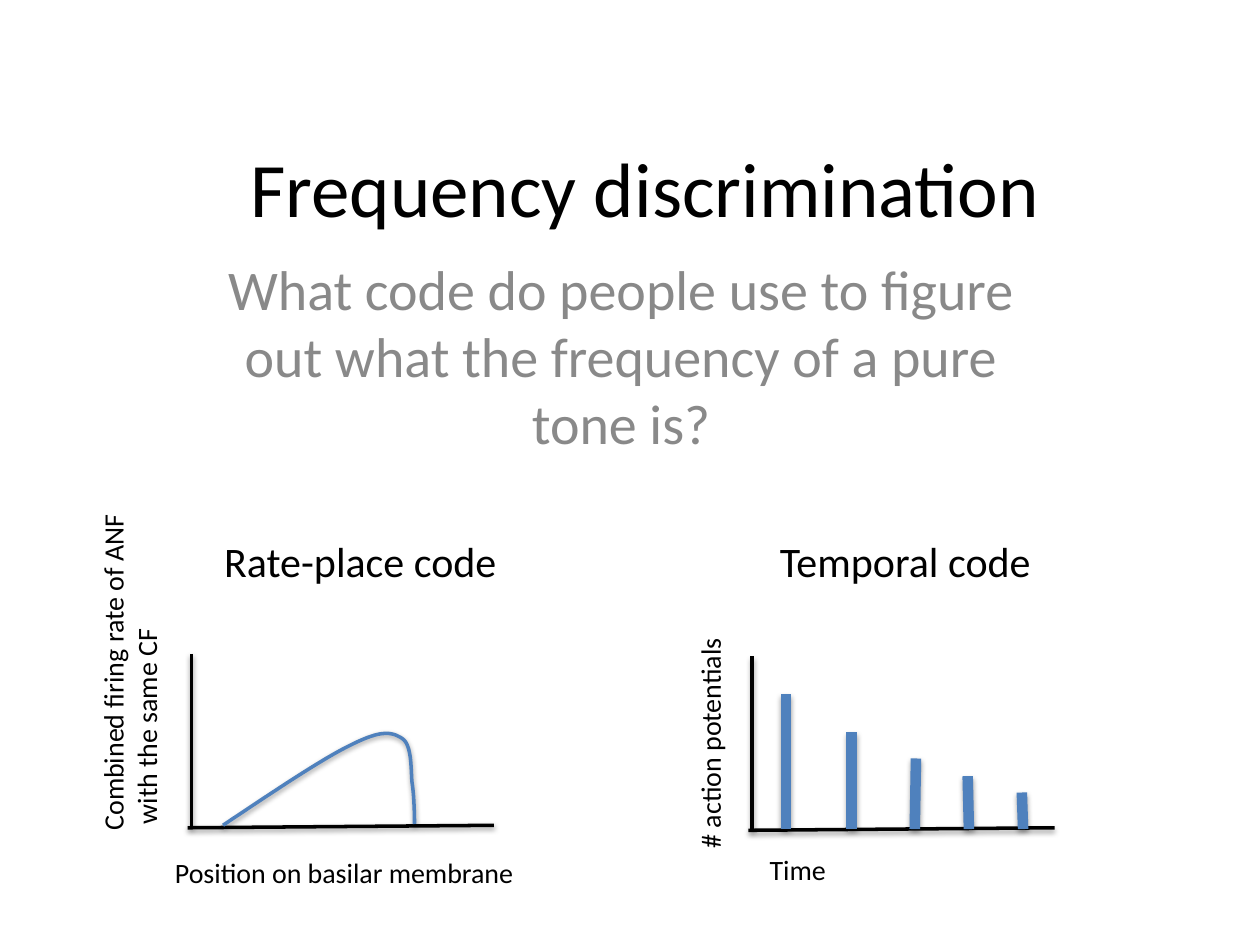
from dataclasses import dataclass
from typing import Any

from lxml import etree
from pptx import Presentation
from pptx import util as u
from pptx.dml import color
from pptx.enum import shapes, text
from pptx.oxml import ns

BLACK, GRAY, BLUE = "000000", "898989", "4F81BD"


def rgb(value):
    return color.RGBColor.from_string(value)


def bezier(start, curves, steps=16):
    points = [start]
    for first, second, end in curves:
        origin = points[-1]
        for step in range(1, steps + 1):
            t = step / steps
            s = 1 - t
            points.append(tuple(
                s**3 * a + 3 * s * s * t * b + 3 * s * t * t * c + t**3 * d
                for a, b, c, d in zip(origin, first, second, end)))
    return points


@dataclass
class Painter:
    page: Any
    font: str = "Calibri"

    def add_span(self, para, content, size, tint):
        span = para.add_run()
        span.text = content
        span.font.name = self.font
        span.font.size = u.Pt(size)
        span.font.color.rgb = rgb(tint)

    def place(self, box, left, top, width, height):
        box.left, box.top = u.Inches(left), u.Inches(top)
        box.width, box.height = u.Inches(width), u.Inches(height)

    def heading(self, box, area, content, size, tint, anchor):
        self.place(box, *area)
        box.text_frame.vertical_anchor = anchor
        box.text_frame.auto_size = text.MSO_AUTO_SIZE.NONE
        para = box.text_frame.paragraphs[0]
        para.alignment = text.PP_ALIGN.CENTER
        para.space_before = u.Pt(0)
        self.add_span(para, content, size, tint)

    def label(self, area, lines, size=16, turn=0):
        box = self.page.shapes.add_textbox(*map(u.Inches, area))
        box.rotation = turn
        frame = box.text_frame
        frame.word_wrap = False
        frame.auto_size = text.MSO_AUTO_SIZE.SHAPE_TO_FIT_TEXT
        for index, content in enumerate(lines):
            para = frame.add_paragraph() if index else frame.paragraphs[0]
            self.add_span(para, content, size, BLACK)

    def stroke(self, shape, tint, weight):
        shape.line.color.rgb = rgb(tint)
        shape.line.width = u.Pt(weight)
        properties = shape.element.spPr
        effects = etree.SubElement(properties, ns.qn("a:effectLst"))
        shadow = etree.SubElement(
            effects, ns.qn("a:outerShdw"), blurRad=str(u.Pt(3.1)),
            dist=str(u.Pt(1.6)), dir="5400000", rotWithShape="0")
        shade = etree.SubElement(shadow, ns.qn("a:srgbClr"), val=BLACK)
        etree.SubElement(shade, ns.qn("a:alpha"), val="38000")

    def line(self, start, end, tint=BLACK, weight=2):
        connector = self.page.shapes.add_connector(
            shapes.MSO_CONNECTOR.STRAIGHT, *map(u.Inches, start + end))
        self.stroke(connector, tint, weight)

    def axes(self, left, top):
        self.line((left, top), (left, top + 1.38))
        self.line((left - 0.03, top + 1.38), (left + 2.4, top + 1.36))

    def curve(self, points, tint):
        spots = [(u.Inches(x), u.Inches(y)) for x, y in points]
        builder = self.page.shapes.build_freeform(*spots[0])
        builder.add_line_segments(spots[1:], close=False)
        shape = builder.convert_to_shape()
        shape.fill.background()
        self.stroke(shape, tint, 2)


def main():
    deck = Presentation()
    deck.slide_width, deck.slide_height = u.Inches(10), u.Inches(7.5)
    page = deck.slides.add_slide(deck.slide_layouts[0])
    painter = Painter(page)

    painter.heading(page.shapes.title, (0.87, 0.68, 8.5, 1.61),
                    "Frequency discrimination", 44, BLACK, text.MSO_ANCHOR.MIDDLE)
    painter.heading(page.placeholders[1], (1.43, 1.97, 7, 1.92),
                    "What code do people use to figure out what the frequency "
                    "of a pure tone is?", 32, GRAY, text.MSO_ANCHOR.TOP)

    painter.axes(1.52, 5.19)
    painter.axes(5.97, 5.21)
    painter.label((1.29, 6.74, 2.92, 0.37), ["Position on basilar membrane"])
    painter.label((6.01, 6.72, 0.65, 0.37), ["Time"])
    painter.label((-0.34, 5, 2.74, 0.64),
                  ["Combined firing rate of ANF", " with the same CF"], turn=270)

    firing_rate = bezier((1.77, 6.55), [
        ((2.16, 6.29), (2.56, 6.02), (2.79, 5.91)),
        ((3.03, 5.79), (3.11, 5.81), (3.19, 5.86)),
        ((3.27, 5.91), (3.26, 6.1), (3.27, 6.21)),
        ((3.29, 6.33), (3.29, 6.54), (3.29, 6.54)),
    ])
    painter.curve(firing_rate, BLUE)

    spikes = [(6.24, 5.51, 6.24), (6.76, 5.81, 6.76), (7.27, 6.02, 7.26),
              (7.68, 6.16, 7.69), (8.11, 6.29, 8.12)]
    for top_x, top, foot_x in spikes:
        painter.line((top_x, top), (foot_x, 6.58), BLUE, 6)

    painter.label((4.69, 5.7, 1.89, 0.37), ["# action potentials"], turn=270)
    painter.label((1.68, 4.2, 2.39, 0.51), ["Rate-place code"], 24)
    painter.label((6.09, 4.2, 2.21, 0.51), ["Temporal code"], 24)

    deck.save("out.pptx")


if __name__ == "__main__":
    main()
